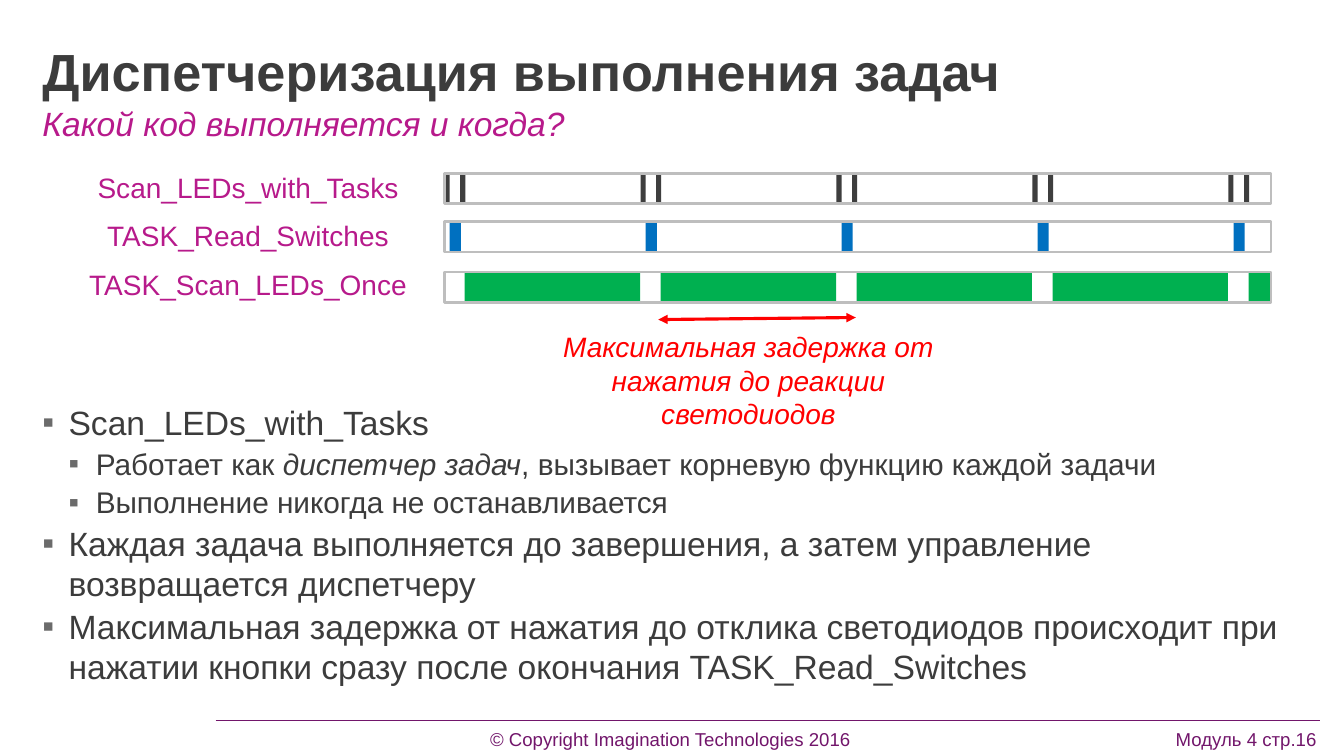
from dataclasses import dataclass
from typing import Optional

import lxml.etree
import pptx
import pptx.dml.color
import pptx.enum.shapes
import pptx.enum.text
import pptx.oxml.ns
import pptx.util

COLORS = {
    "ink": "3C3C3C", "bullet": "6B6B6B", "accent": "B71A8B", "footer": "72166B",
    "alert": "FF0000", "frame": "BEBEBE", "dispatcher": "3E3E3E",
    "switches": "0070C0", "leds": "00B050",
}
ALIGN = pptx.enum.text.PP_ALIGN
RECTANGLE = pptx.enum.shapes.MSO_SHAPE.RECTANGLE
STRAIGHT = pptx.enum.shapes.MSO_CONNECTOR.STRAIGHT

SLIDE_WIDTH = pptx.util.Inches(13.33)
SLIDE_HEIGHT = pptx.util.Inches(7.5)
COLUMN = SLIDE_WIDTH / 100
ROW = SLIDE_HEIGHT / 100

TRACK_LEFT, TRACK_WIDTH, TRACK_HEIGHT = 33.08, 61.5, 4
PERIOD, CYCLES = 14.58, 5
LABEL_TOP, LABEL_STEP = 22, 6.4


@dataclass
class Area:
    left: float
    top: float
    width: float
    height: float

    def place(self) -> tuple[int, int, int, int]:
        return (round(self.left * COLUMN), round(self.top * ROW),
                round(self.width * COLUMN), round(self.height * ROW))


@dataclass
class Lane:
    label: str
    top: float
    color: str
    offsets: tuple[float, ...]
    width: float


@dataclass
class Bullet:
    spans: tuple[tuple[str, bool], ...]
    size: float = 24
    level: int = 0
    margin: float = 0.26
    hanging: float = 0.26


LANES = (
    Lane("Scan_LEDs_with_Tasks", 22.93, "dispatcher", (0, 1.16), 0.38),
    Lane("TASK_Read_Switches", 29.33, "switches", (0.38,), 0.83),
    Lane("TASK_Scan_LEDs_Once", 36, "leds", (1.5,), 13.05),
)
SUB = {"size": 21.3, "level": 1, "margin": 0.53, "hanging": 0.27}
BULLETS = (
    Bullet((("Scan_LEDs_with_Tasks", False),)),
    Bullet((("Работает как ", False), ("диспетчер задач", True),
            (", вызывает корневую функцию каждой задачи", False)), **SUB),
    Bullet((("Выполнение никогда не останавливается", False),), **SUB),
    Bullet((("Каждая задача выполняется до завершения, а затем управление "
             "возвращается диспетчеру", False),)),
    Bullet((("Максимальная задержка от нажатия до отклика светодиодов происходит "
             "при нажатии кнопки сразу после окончания TASK_Read_Switches", False),)),
)


def rgb(name: str) -> pptx.dml.color.RGBColor:
    return pptx.dml.color.RGBColor.from_string(COLORS[name])


def child(parent, tag: str, **attributes: str):
    return lxml.etree.SubElement(parent, pptx.oxml.ns.qn(tag), attributes)


def write(para, text: str, *, size: float, color: str, bold: bool = False,
          italic: bool = False, align=ALIGN.LEFT, line: float = 1, after: float = 0) -> None:
    para.alignment = align
    para.line_spacing = line
    para.space_before = pptx.util.Pt(0)
    para.space_after = pptx.util.Pt(after)
    span = para.add_run()
    span.text = text
    span.font.name = "Arial"
    span.font.size = pptx.util.Pt(size)
    span.font.bold = bold
    span.font.italic = italic
    span.font.color.rgb = rgb(color)


def prepare(box, area: Area, inset: tuple[float, float] = (0, 0)):
    box.left, box.top, box.width, box.height = area.place()
    frame = box.text_frame
    frame.word_wrap = True
    frame.auto_size = pptx.enum.text.MSO_AUTO_SIZE.NONE
    frame.vertical_anchor = pptx.enum.text.MSO_ANCHOR.TOP
    frame.margin_left = frame.margin_right = pptx.util.Inches(inset[0])
    frame.margin_top = frame.margin_bottom = pptx.util.Inches(inset[1])
    return frame


def add_caption(page, area: Area, text: str, color: str, italic: bool = False) -> None:
    frame = prepare(page.shapes.add_textbox(*area.place()), area, (0.09, 0.04))
    write(frame.paragraphs[0], text, size=20, color=color, italic=italic, align=ALIGN.CENTER)


def add_bar(page, area: Area, fill: Optional[str] = None) -> None:
    bar = page.shapes.add_shape(RECTANGLE, *area.place())
    bar.shadow.inherit = False
    if fill:
        bar.fill.solid()
        bar.fill.fore_color.rgb = rgb(fill)
        bar.line.fill.background()
    else:
        bar.fill.background()
        bar.line.color.rgb = rgb("frame")
        bar.line.width = pptx.util.Pt(1.75)


def add_lane(page, lane: Lane, index: int) -> None:
    add_caption(page, Area(5.63, LABEL_TOP + index * LABEL_STEP, 25.65, 5.6),
                lane.label, "accent")
    for cycle in range(CYCLES):
        for offset in lane.offsets:
            start = cycle * PERIOD + offset
            width = min(lane.width, TRACK_WIDTH - start)
            add_bar(page, Area(TRACK_LEFT + start, lane.top, width, TRACK_HEIGHT), lane.color)
    add_bar(page, Area(TRACK_LEFT, lane.top, TRACK_WIDTH, TRACK_HEIGHT))


def add_line(page, start: tuple[float, float], end: tuple[float, float],
             color: str, width: float, arrows: bool = False) -> None:
    line = page.shapes.add_connector(
        STRAIGHT, round(start[0] * COLUMN), round(start[1] * ROW),
        round(end[0] * COLUMN), round(end[1] * ROW))
    line.line.color.rgb = rgb(color)
    line.line.width = pptx.util.Pt(width)
    if arrows:
        outline = line.line._get_or_add_ln()
        for tag in ("a:headEnd", "a:tailEnd"):
            child(outline, tag, type="triangle")
    child(line._element.spPr, "a:effectLst")


def add_bullets(box, area: Area) -> None:
    frame = prepare(box, area)
    for index, bullet in enumerate(BULLETS):
        para = frame.add_paragraph() if index else frame.paragraphs[0]
        para.level = bullet.level
        properties = para._p.get_or_add_pPr()
        properties.set("marL", str(pptx.util.Inches(bullet.margin)))
        properties.set("indent", str(-pptx.util.Inches(bullet.hanging)))
        child(child(properties, "a:buClr"), "a:srgbClr", val=COLORS["bullet"])
        child(properties, "a:buFont", typeface="Arial")
        child(properties, "a:buChar", char="▪")
        for text, italic in bullet.spans:
            write(para, text, size=bullet.size, color="ink", italic=italic, after=2)


def add_footer(page) -> None:
    area = Area(1.8, 96.67, 96.45, 2.67)
    para = prepare(page.shapes.add_textbox(*area.place()), area).paragraphs[0]
    tabs = child(para._p.get_or_add_pPr(), "a:tabLst")
    for position, align in ((6.41, "ctr"), (12.82, "r")):
        child(tabs, "a:tab", pos=str(pptx.util.Inches(position)), algn=align)
    write(para, "\t© Copyright Imagination Technologies 2016\tМодуль 4 стр.16",
          size=13.3, color="footer", line=0.9)
    add_line(page, (16.05, 95.33), (98.18, 95.33), "footer", 0.5)


def main() -> None:
    deck = pptx.Presentation()
    deck.slide_width, deck.slide_height = SLIDE_WIDTH, SLIDE_HEIGHT
    page = deck.slides.add_slide(deck.slide_layouts.get_by_name("Two Content"))
    title, subtitle, body = page.placeholders
    add_footer(page)
    write(prepare(title, Area(3.15, 6.53, 95.1, 6.27)).paragraphs[0],
          "Диспетчеризация выполнения задач", size=37.3, color="ink", bold=True, line=0.85)
    para = prepare(subtitle, Area(3.15, 13.6, 95.1, 4.13)).paragraphs[0]
    properties = para._p.get_or_add_pPr()
    properties.set("marL", "0")
    properties.set("indent", "0")
    child(properties, "a:buNone")
    write(para, "Какой код выполняется и когда?", size=24, color="accent", italic=True, after=8)
    add_bullets(body, Area(3.15, 53.2, 93.45, 42))
    add_caption(page, Area(40.73, 43.07, 29.93, 10.13),
                "Максимальная задержка от нажатия до реакции светодиодов", "alert", italic=True)
    for index, lane in enumerate(LANES):
        add_lane(page, lane, index)
    add_line(page, (48.98, 42.27), (63.68, 42), "alert", 2.25, arrows=True)
    deck.save("out.pptx")


if __name__ == "__main__":
    main()
